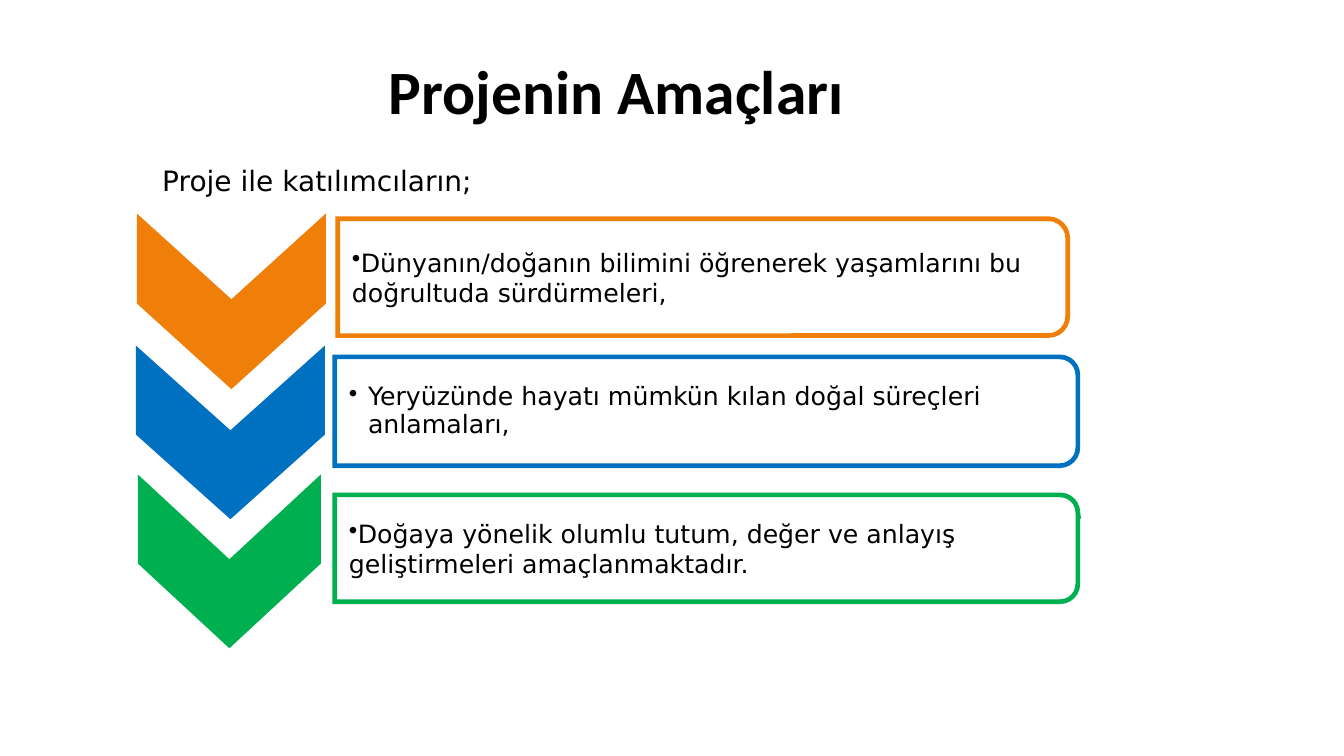
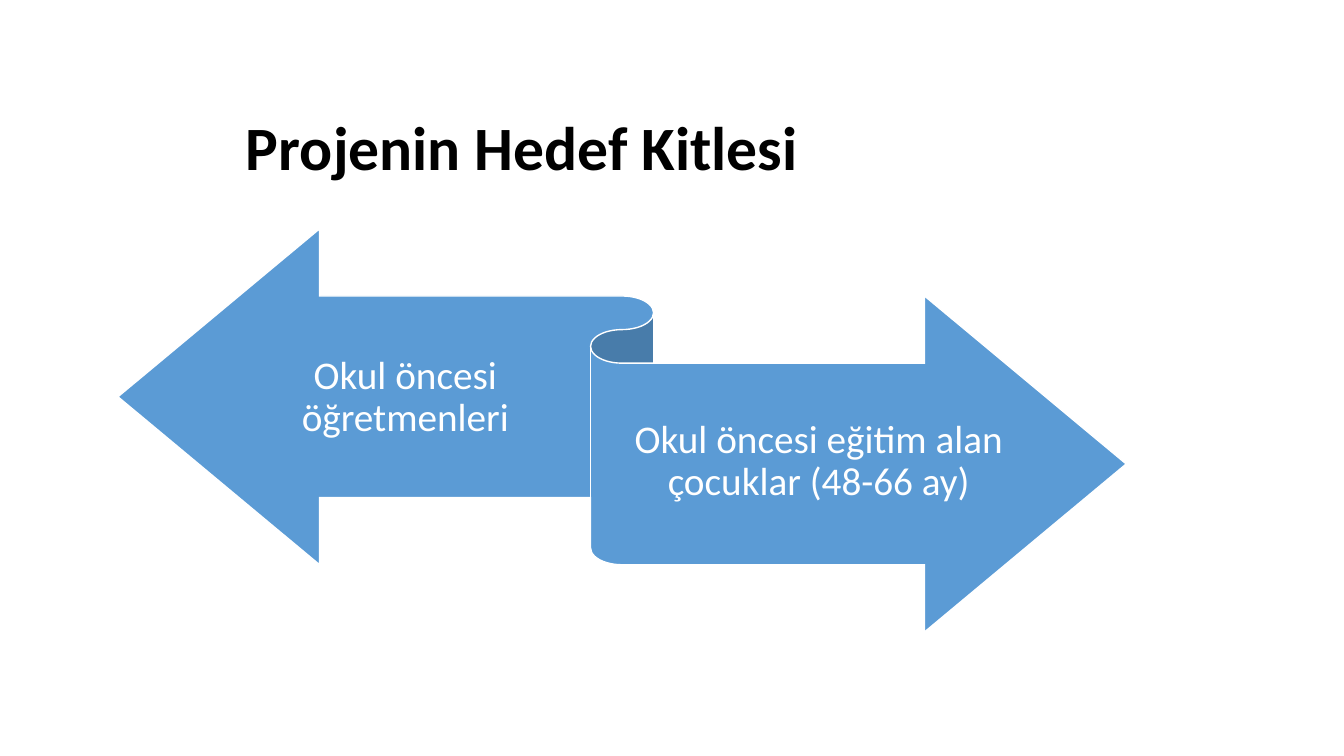
import pptx
import pptx.util
import pptx.dml.color
import pptx.enum.shapes
import pptx.enum.text
import pptx.oxml
import pptx.oxml.ns

Inches = pptx.util.Inches
SHAPES = pptx.enum.shapes.MSO_SHAPE
ALIGN = pptx.enum.text.PP_ALIGN

COLORS = {
    "text": "000000", "white": "FFFFFF", "ribbon": "5B9BD5",
    "orange": "F07F09", "blue": "0070C0", "green": "00B050",
}
TITLE_STYLE = {"size": pptx.util.Pt(44), "name": "Calibri", "bold": True}
INTRO_STYLE = {"size": pptx.util.Pt(20), "name": "DejaVu Sans"}
GOAL_STYLE = {"size": pptx.util.Pt(18), "name": "DejaVu Sans"}
ARROW_STYLE = {"size": pptx.util.Pt(28), "name": "Calibri"}
DEFAULT_INSETS = (0.1, 0.05, 0.1, 0.05)
GOAL_INSETS = (0.14, 0.01, 0.01, 0.01)
ARROW_INSETS = (0, 0.11, 0, 0.12)

# Each goal: colour, chevron box, frame box, text, hanging indent, line spacing
GOALS = [
    ("orange", (1.38, 2.17, 1.83, 1.66), (3.35, 2.17, 7.24, 1.16),
     "Dünyanın/doğanın bilimini öğrenerek yaşamlarını bu doğrultuda sürdürmeleri,", 0, 1.0),
    ("blue", (1.37, 3.48, 1.83, 1.64), (3.32, 3.54, 7.37, 1.08),
     "Yeryüzünde hayatı mümkün kılan doğal süreçleri anlamaları,", 0.19, 0.9),
    ("green", (1.39, 4.76, 1.77, 1.64), (3.32, 4.91, 7.37, 1.06),
     "Doğaya yönelik olumlu tutum, değer ve anlayış geliştirmeleri amaçlanmaktadır.", 0, 1.0),
]


def rgb(name):
    return pptx.dml.color.RGBColor.from_string(COLORS[name])


def add_xml(parent, tag, **attributes):
    child = pptx.oxml.parse_xml(f"<a:{tag} {pptx.oxml.ns.nsdecls('a')}/>")
    for name, value in attributes.items():
        child.set(name, str(value))
    parent.append(child)


def write_text(box, text, style, color="text", align=ALIGN.LEFT, spacing=1.0,
               insets=DEFAULT_INSETS, hanging=None):
    """Fill a box with one paragraph; a hanging indent gives it a bullet."""
    frame = box.text_frame
    sides = ("margin_left", "margin_top", "margin_right", "margin_bottom")
    settings = {"word_wrap": True,
                "auto_size": pptx.enum.text.MSO_AUTO_SIZE.NONE,
                "vertical_anchor": pptx.enum.text.MSO_ANCHOR.MIDDLE}
    settings.update(zip(sides, map(Inches, insets)))
    for name, value in settings.items():
        setattr(frame, name, value)
    para = frame.paragraphs[0]
    if hanging is not None:
        properties = para._p.get_or_add_pPr()
        properties.set("marL", str(Inches(hanging)))
        properties.set("indent", str(-Inches(hanging)))
        add_xml(properties, "buChar", char="•")
    para.alignment = align
    para.line_spacing = spacing
    span = para.add_run()
    span.text = text
    for name, value in style.items():
        setattr(span.font, name, value)
    span.font.color.rgb = rgb(color)


def add_text(page, area, text, style, **options):
    box = page.shapes.add_textbox(*map(Inches, area))
    write_text(box, text, style, **options)


def add_page(deck, title, area):
    """Add a title-only page with the shared title style."""
    page = deck.slides.add_slide(deck.slide_layouts[5])
    box = page.shapes.title
    for name, value in zip(("left", "top", "width", "height"), area):
        setattr(box, name, Inches(value))
    write_text(box, title, TITLE_STYLE, align=ALIGN.CENTER, spacing=0.9)
    return page


def add_figure(page, kind, area, fill, line, weight):
    figure = page.shapes.add_shape(kind, *map(Inches, area))
    figure.shadow.inherit = False
    figure.fill.solid()
    figure.fill.fore_color.rgb = rgb(fill)
    figure.line.color.rgb = rgb(line)
    figure.line.width = pptx.util.Pt(weight)
    add_xml(figure.line._get_or_add_ln(), "miter", lim=800000)
    return figure


def add_turned(page, kind, area, fill, line):
    """Add a shape turned a quarter clockwise so that it covers the area."""
    left, top, width, height = area
    shift = (width - height) / 2
    figure = add_figure(page, kind, (left + shift, top - shift, height, width), fill, line, 3.35)
    figure.rotation = 90


def add_goal(page, color, chevron, frame, text, hanging, spacing):
    add_turned(page, SHAPES.CHEVRON, chevron, color, color)
    add_turned(page, SHAPES.ROUND_2_SAME_RECTANGLE, frame, "white", color)
    left, top, width, height = frame
    add_text(page, (left, top + 0.05, width - 0.05, height - 0.1), text, GOAL_STYLE,
             spacing=spacing, insets=GOAL_INSETS, hanging=hanging)


def add_ribbon(page, area, left_text, right_text):
    """Add the two-way ribbon with a label on each half."""
    add_figure(page, SHAPES.LEFT_RIGHT_RIBBON, area, "ribbon", "white", 1)
    left, top, _, _ = area
    labels = [((left + 1.08, top + 0.7, 3.54, 1.96), left_text),
              ((left + 5, top + 1.34, 3.9, 1.96), right_text)]
    for place, text in labels:
        add_text(page, place, text, ARROW_STYLE, color="white", align=ALIGN.CENTER,
                 spacing=0.9, insets=ARROW_INSETS)


def main():
    deck = pptx.Presentation()
    deck.slide_width = Inches(13.33)
    deck.slide_height = Inches(7.5)

    # Project goals
    page = add_page(deck, "Projenin Amaçları", (1.51, 0.54, 9.21, 0.8))
    add_text(page, (1.51, 1.58, 9.21, 0.42), "Proje ile katılımcıların;", INTRO_STYLE)
    for goal in GOALS:
        add_goal(page, *goal)

    # Target audience
    page = add_page(deck, "Projenin Hedef Kitlesi", (2.05, 0.77, 6.26, 1.45))
    add_ribbon(page, (1.17, 2.27, 10, 4), "Okul öncesi öğretmenleri",
               "Okul öncesi eğitim alan çocuklar (48-66 ay)")

    deck.save("out.pptx")


if __name__ == "__main__":
    main()
